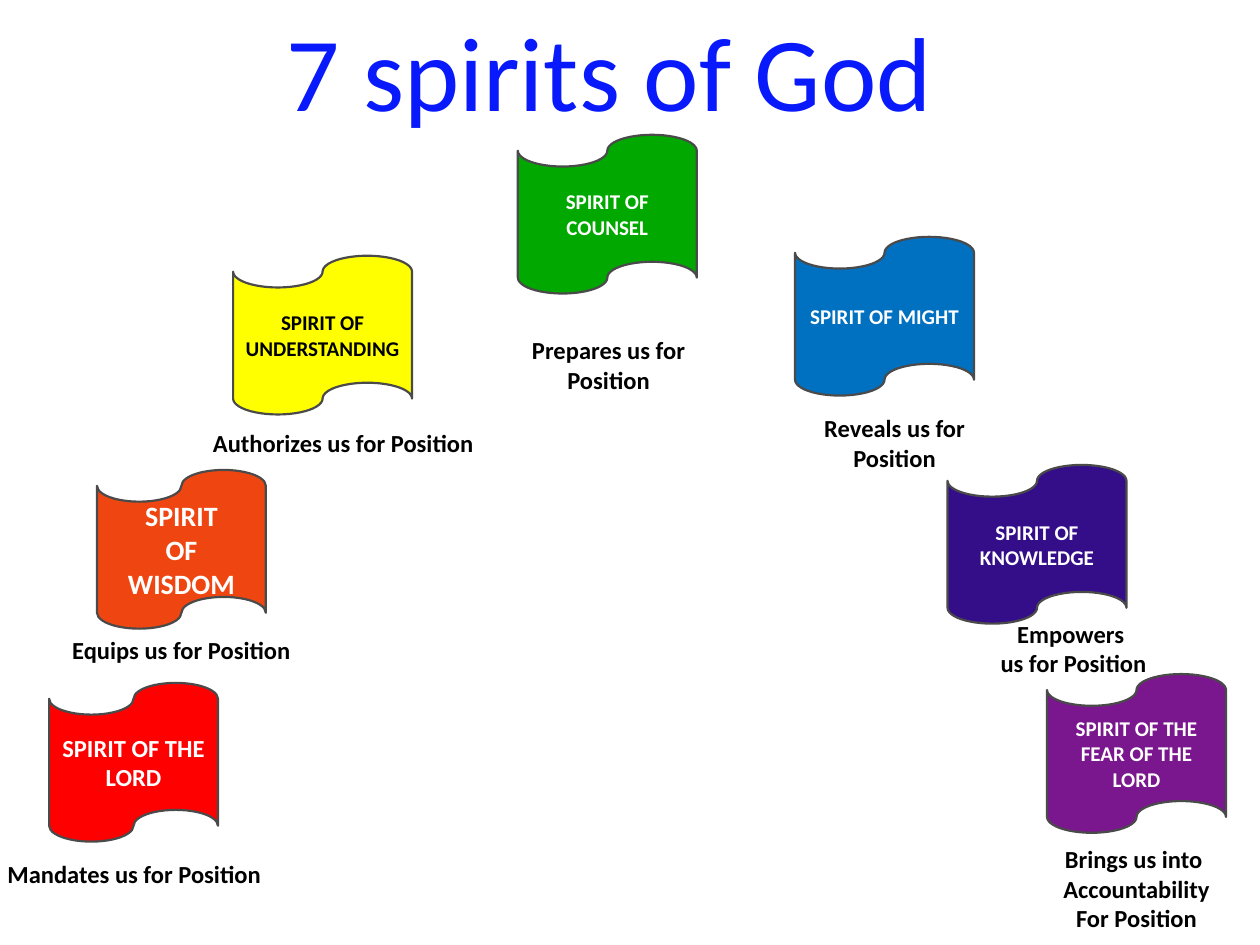
from dataclasses import dataclass

from pptx import Presentation
from pptx.dml.color import RGBColor
from pptx.enum.shapes import MSO_SHAPE as Shape
from pptx.enum.text import MSO_ANCHOR as Anchor, MSO_AUTO_SIZE as AutoSize, PP_ALIGN as Align
from pptx.util import Inches, Pt


@dataclass(frozen=True)
class Theme:
    font: str = "Calibri"
    title: str = "0819FB"
    dark: str = "000000"
    light: str = "FFFFFF"
    outline: str = "4A4A4A"
    title_size: int = 60
    caption_size: int = 14
    small_size: int = 12
    large_size: int = 16


def set_all(target, values):
    for name, value in values.items():
        setattr(target, name, value)


def place(box, at):
    set_all(box, dict(zip(("left", "top", "width", "height"), map(Inches, at))))


class SlideBuilder:
    def __init__(self, page, theme):
        self.page = page
        self.theme = theme

    def add_text(self, box, paragraphs, size, color, bold=True, after=0, **frame_format):
        frame = box.text_frame
        set_all(frame, {"word_wrap": True, "auto_size": AutoSize.NONE, **frame_format})
        for index, text in enumerate(paragraphs):
            para = frame.paragraphs[0] if index == 0 else frame.add_paragraph()
            para.text = text
            set_all(para, {"alignment": Align.CENTER, "space_after": Pt(after)})
            for span in para.runs:
                set_all(span.font, {"name": self.theme.font, "size": Pt(size), "bold": bold})
                span.font.color.rgb = RGBColor.from_string(color)

    def title(self, text, at):
        box = self.page.shapes.title
        place(box, at)
        self.add_text(box, [text], self.theme.title_size, self.theme.title, bold=False,
                      vertical_anchor=Anchor.TOP)

    def caption(self, text, at, filled=False, inset=0.0):
        box = self.page.shapes.add_textbox(*map(Inches, at))
        if filled:
            box.fill.solid()
            box.fill.fore_color.rgb = RGBColor.from_string(self.theme.light)
        sides = ("margin_left", "margin_top", "margin_right", "margin_bottom")
        margins = dict.fromkeys(sides, Inches(inset))
        self.add_text(box, [text], self.theme.caption_size, self.theme.dark, after=10,
                      vertical_anchor=Anchor.TOP, **margins)

    def banner(self, paragraphs, at, fill, size, color):
        box = self.page.shapes.add_shape(Shape.FLOWCHART_PUNCHED_TAPE, *map(Inches, at))
        box.shadow.inherit = False
        box.fill.solid()
        box.fill.fore_color.rgb = RGBColor.from_string(fill)
        box.line.color.rgb = RGBColor.from_string(self.theme.outline)
        box.line.width = Pt(1.25)
        self.add_text(box, paragraphs, size, color, vertical_anchor=Anchor.MIDDLE)


def main():
    theme = Theme()
    deck = Presentation()
    set_all(deck, {"slide_width": Inches(10), "slide_height": Inches(7.5)})
    builder = SlideBuilder(deck.slides.add_slide(deck.slide_layouts[5]), theme)

    builder.title("7 spirits of God", (1.44, 0, 6.79, 1.11))

    captions = [
        ("Mandates us for Position", (0.02, 6.82, 2.09, 0.46), {}),
        ("Equips us for Position", (0.56, 5.04, 1.76, 0.41), {}),
        ("Authorizes us for Position", (1.61, 3.4, 2.23, 0.4), {"filled": True}),
        ("Prepares us for Position", (3.89, 2.66, 1.88, 0.62), {"filled": True}),
        ("Reveals us for Position", (6.31, 3.28, 1.58, 0.5), {"filled": True}),
        ("Empowers \nus for Position", (7.52, 4.86, 2, 0.59), {"inset": 0.05}),
        ("Brings us into \nAccountability\nFor Position", (7.96, 6.7, 2.12, 0.71), {}),
    ]
    for text, at, options in captions:
        builder.caption(text, at, **options)

    narrow, wide, height = 1.34, 1.42, 1.26
    small, medium, large = theme.small_size, theme.caption_size, theme.large_size
    banners = [
        (["SPIRIT OF THE", "LORD"], 0.39, 5.42, narrow, "FF0000", medium, theme.light),
        (["SPIRIT", "OF", "WISDOM"], 0.77, 3.73, narrow, "EF4611", large, theme.light),
        (["SPIRIT OF", "UNDERSTANDING"], 1.85, 2.03, wide, "FFFF00", small, theme.dark),
        (["SPIRIT OF COUNSEL"], 4.11, 1.07, wide, "00A800", small, theme.light),
        (["SPIRIT OF MIGHT"], 6.31, 1.88, wide, "0070C0", small, theme.light),
        (["SPIRIT OF KNOWLEDGE"], 7.52, 3.69, wide, "340E88", small, theme.light),
        (["SPIRIT OF THE FEAR OF THE LORD"], 8.31, 5.35, wide, "7A168E", small, theme.light),
    ]
    for paragraphs, left, top, width, fill, size, color in banners:
        builder.banner(paragraphs, (left, top, width, height), fill, size, color)

    deck.save("out.pptx")


if __name__ == "__main__":
    main()
